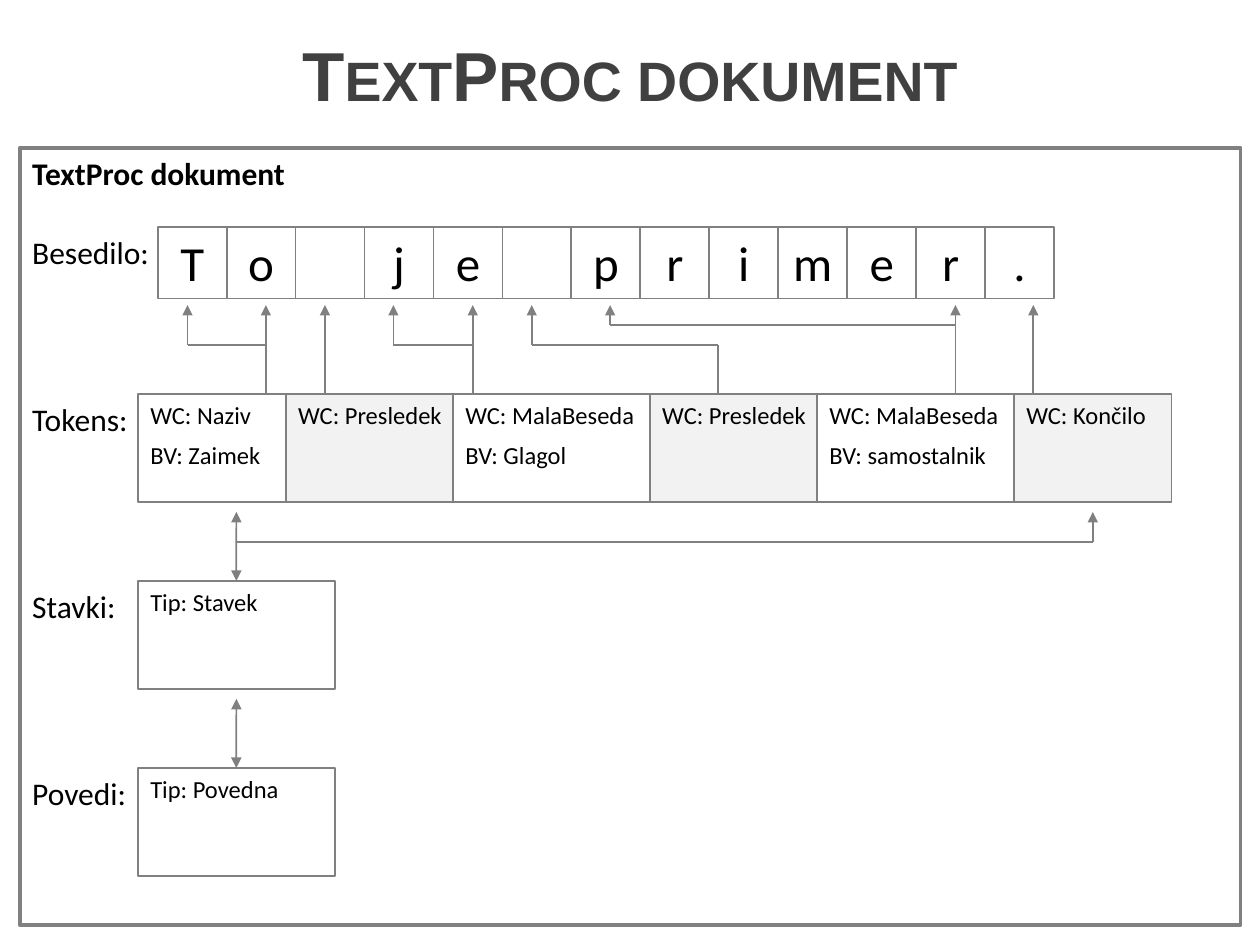
import pptx
import pptx.util
import pptx.dml.color
import pptx.enum.shapes
import pptx.enum.text
import pptx.oxml.ns
from lxml import etree

Cm, Pt = pptx.util.Cm, pptx.util.Pt
ALIGN = pptx.enum.text.PP_ALIGN
ANCHOR = pptx.enum.text.MSO_ANCHOR
COLORS = {"title": "404040", "text": "000000", "line": "808080",
          "page": "FFFFFF", "shade": "F2F2F2"}
TOKENS = [(2.98, "WC: Naziv", "BV: Zaimek"), (3.37, "WC: Presledek", ""),
          (3.97, "WC: MalaBeseda", "BV: Glagol"), (3.37, "WC: Presledek", ""),
          (3.97, "WC: MalaBeseda", "BV: samostalnik"), (3.18, "WC: Končilo", "")]
HIGH = 2.18


def color(name):
    """Return the named colour."""
    return pptx.dml.color.RGBColor.from_string(COLORS[name])


def write(frame, text, size=18, font="Calibri", tint="text", bold=False,
          caps=False, align=ALIGN.LEFT, anchor=ANCHOR.TOP):
    """Fill a text frame with one formatted paragraph."""
    frame.word_wrap = True
    frame.vertical_anchor = anchor
    para = frame.paragraphs[0]
    para.alignment = align
    run = para.add_run()
    run.text = text
    run.font.size, run.font.name, run.font.bold = Pt(size), font, bold
    run.font.color.rgb = color(tint)
    if caps:
        run.font._element.set("cap", "small")


def label(slide, x, y, w, h, text, **form):
    """Add a text box."""
    box = slide.shapes.add_textbox(Cm(x), Cm(y), Cm(w), Cm(h))
    write(box.text_frame, text, **form)


def rect(slide, x, y, w, h, fill="page", width=1):
    """Add an outlined rectangle."""
    kind = pptx.enum.shapes.MSO_SHAPE.RECTANGLE
    box = slide.shapes.add_shape(kind, Cm(x), Cm(y), Cm(w), Cm(h))
    box.shadow.inherit = False
    box.fill.solid()
    box.fill.fore_color.rgb = color(fill)
    box.line.color.rgb = color("line")
    box.line.width = Pt(width)
    return box


def line(slide, x1, y1, x2, y2, ends=()):
    """Add a straight line with arrowheads at the given ends."""
    kind = pptx.enum.shapes.MSO_CONNECTOR.STRAIGHT
    link = slide.shapes.add_connector(kind, Cm(x1), Cm(y1), Cm(x2), Cm(y2))
    link.line.color.rgb = color("line")
    link.line.width = Pt(1)
    qn = pptx.oxml.ns.qn
    for end in ends:
        etree.SubElement(link.line._get_or_add_ln(), qn(f"a:{end}"), type="triangle")
    etree.SubElement(link._element.spPr, qn("a:effectLst"))
    return link


def letters(slide, x, y, text):
    """Draw one cell for each letter."""
    step = 1.39
    for num, char in enumerate(text):
        cell = rect(slide, x + num * step, y, step, 1.45)
        if char != " ":
            write(cell.text_frame, char, size=28, align=ALIGN.CENTER)


def tokens(slide, x, y):
    """Draw the row of tokens, with every second one shaded."""
    for num, (wide, *notes) in enumerate(TOKENS):
        rect(slide, x, y, wide, HIGH, "shade" if num % 2 else "page")
        for row, note in enumerate(notes):
            if note:
                label(slide, x, y + row * 0.8, wide + 0.2, 0.86, note, size=14)
        x += wide


def links(slide, x, y):
    """Draw the arrows from the tokens up to their letters."""
    tail, top, bend = ["tailEnd"], y - 1.79, 0.99
    for pos in (2.58, 3.77, 6.75, 16.48, 18.05):
        line(slide, x + pos, y, x + pos, top, tail)
    for tip, base, gap in ((1, 2.58, bend), (5.15, 6.75, bend),
                           (7.94, 11.7, bend), (9.52, 16.48, 1.39)):
        line(slide, x + tip, y - gap, x + tip, top, tail)
        line(slide, x + tip, y - gap, x + base, y - gap)
    line(slide, x + 11.7, y, x + 11.7, y - bend)


def node(slide, x, y, text):
    """Draw a box with a two-way arrow to the row above."""
    box = rect(slide, x, y, 3.97, HIGH)
    label(slide, x, y, 3.97, 0.86, text, size=14)
    mid = x + 3.97 / 2
    link = line(slide, mid, y, mid, y - 1.39, ("headEnd", "tailEnd"))
    link.begin_connect(box, 0)


def diagram(slide, x, y, w, h):
    """Draw the framed document with its four layers."""
    rect(slide, x, y, w, h, width=2)
    label(slide, x, y, 5.77, 1.02, "TextProc dokument", bold=True)
    rows = {"Besedilo:": 1.59, "Tokens:": 4.96, "Stavki:": 8.73, "Povedi:": 12.5}
    for name, drop in rows.items():
        label(slide, x, y + drop, 2.98, 1.02, name)
    left = x + 2.38
    letters(slide, x + 2.78, y + rows["Besedilo:"], "To je primer.")
    tokens(slide, left, y + rows["Tokens:"])
    links(slide, left, y + rows["Tokens:"])
    node(slide, left, y + rows["Stavki:"], "Tip: Stavek")
    node(slide, left, y + rows["Povedi:"], "Tip: Povedna")
    turn, last = y + 7.94, left + 19.25
    line(slide, last, turn, last, turn - 0.6, ["tailEnd"])
    line(slide, last, turn, left + 3.97 / 2, turn)


def main():
    """Build and save the slide."""
    deck = pptx.Presentation()
    deck.slide_width, deck.slide_height = Cm(25.4), Cm(19.05)
    slide = deck.slides.add_slide(deck.slide_layouts[6])
    label(slide, 0, 0.6, 25.4, 1.78, "TextProc dokument", size=39.6, font="Arial",
          tint="title", bold=True, caps=True, align=ALIGN.CENTER,
          anchor=ANCHOR.MIDDLE)
    diagram(slide, 0.4, 2.98, 24.61, 15.67)
    deck.save("out.pptx")


if __name__ == "__main__":
    main()
